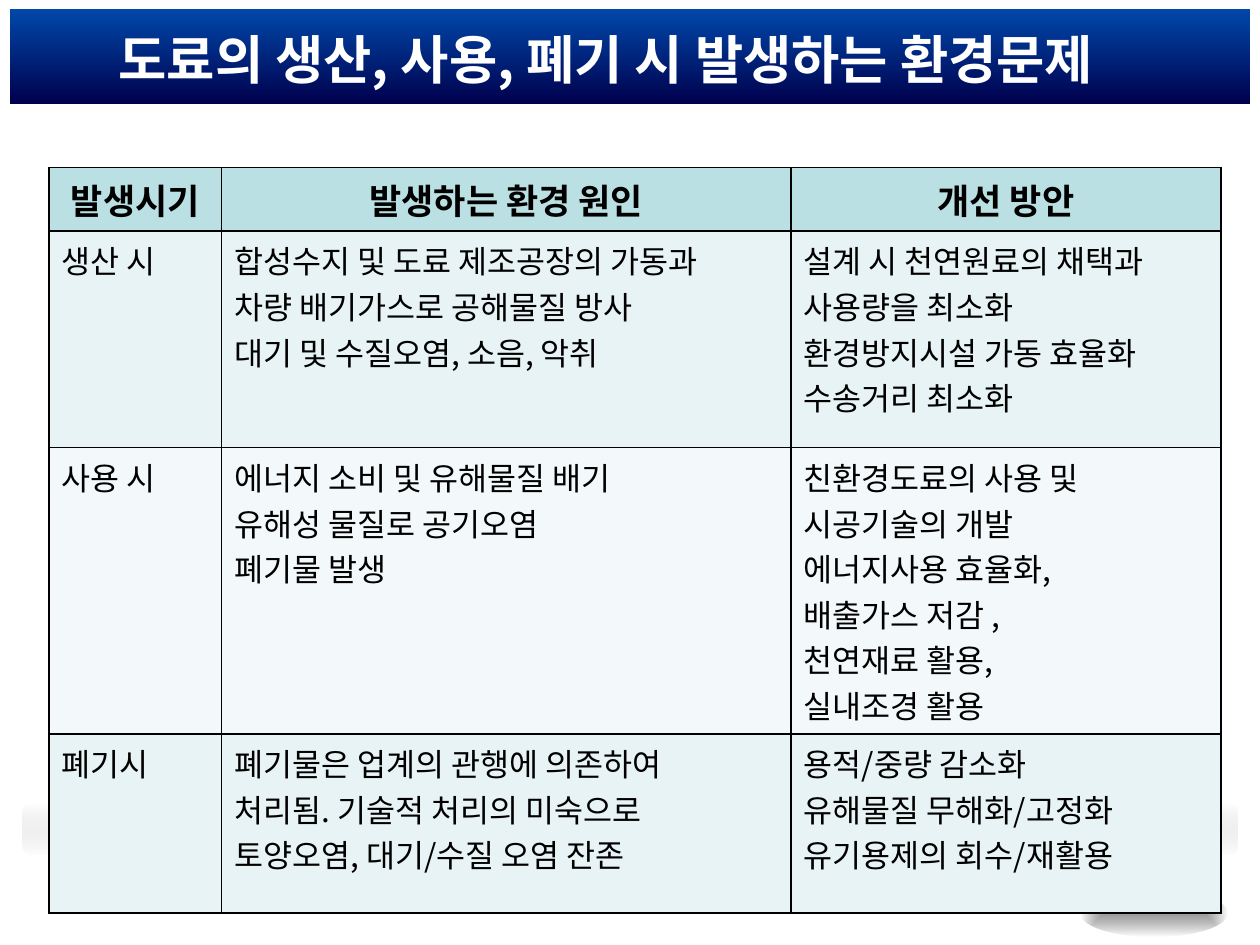
from lxml.etree import SubElement
from pptx import Presentation
from pptx.dml.color import RGBColor
from pptx.enum.shapes import MSO_SHAPE
from pptx.enum.text import MSO_ANCHOR, MSO_AUTO_SIZE, PP_ALIGN
from pptx.oxml import parse_xml
from pptx.oxml.ns import qn
from pptx.util import Inches, Pt

FACE = "Noto Sans CJK KR"
NS = 'xmlns:a="http://schemas.openxmlformats.org/drawingml/2006/main"'
COLS = [1.37, 4.52, 3.41]
ROWS = [0.44, 1.72, 2.16, 1.42]
FILLS = ["BBE0E3", "E7F3F4", "F3F9FA", "E7F3F4"]
CELLS = [
    ["발생시기", "발생하는 환경 원인", "개선 방안"],
    ["생산 시",
     "합성수지 및 도료 제조공장의 가동과\n차량 배기가스로 공해물질 방사\n대기 및 수질오염, 소음, 악취",
     "설계 시 천연원료의 채택과 사용량을 최소화\n환경방지시설 가동 효율화\n수송거리 최소화"],
    ["사용 시",
     "에너지 소비 및 유해물질 배기\n유해성 물질로 공기오염\n폐기물 발생",
     "친환경도료의 사용 및\n시공기술의 개발\n에너지사용 효율화,\n배출가스 저감 ,\n천연재료 활용,\n실내조경 활용"],
    ["폐기시",
     "폐기물은 업계의 관행에 의존하여\n처리됨. 기술적 처리의 미숙으로\n토양오염, 대기/수질 오염 잔존",
     "용적/중량 감소화\n유해물질 무해화/고정화\n유기용제의 회수/재활용"],
]


def color(code):
    return RGBColor.from_string(code)


def style(frame, size, code, bold, align):
    form = {"name": FACE, "size": Pt(size), "bold": bold}
    for para in frame.paragraphs:
        para.alignment = align
        for run in para.runs:
            for key, value in form.items():
                setattr(run.font, key, value)
            run.font.color.rgb = color(code)
            SubElement(run.font._element, qn("a:ea"), typeface=FACE)


def shade(slide, kind, box, stops, round_to=None, radial=False):
    shape = slide.shapes.add_shape(kind, *map(Inches, box))
    shape.shadow.inherit = False
    shape.line.fill.background()
    if round_to is not None:
        shape.adjustments[0] = round_to
    fill = shape.fill
    fill.gradient()
    fill.gradient_angle = 270
    for stop, (spot, code, alpha) in zip(fill.gradient_stops, stops):
        stop.position = spot
        stop.color.rgb = color(code)
        if alpha < 100:
            tint = stop._gs.find(qn("a:srgbClr"))
            SubElement(tint, qn("a:alpha"), val=str(alpha * 1000))
    if radial:
        lin = shape._element.spPr.find(".//" + qn("a:lin"))
        lin.getparent().replace(lin, parse_xml(
            f'<a:path {NS} path="shape"><a:fillToRect l="50000" t="50000" '
            'r="50000" b="50000"/></a:path>'))


def add_title(slide, text):
    title = slide.shapes.title
    slide.shapes._spTree.append(title._element)
    place = {"left": 0.31, "top": -0.16, "width": 9, "height": 1.25}
    for key, value in place.items():
        setattr(title, key, Inches(value))
    frame = title.text_frame
    frame.text = text
    form = {"vertical_anchor": MSO_ANCHOR.MIDDLE, "word_wrap": True,
            "auto_size": MSO_AUTO_SIZE.NONE}
    for key, value in form.items():
        setattr(frame, key, value)
    style(frame, 30, "FFFFFF", True, PP_ALIGN.CENTER)


def border(cell):
    props = cell._tc.get_or_add_tcPr()
    for spot, side in enumerate(["lnL", "lnR", "lnT", "lnB"]):
        props.insert(spot, parse_xml(
            f'<a:{side} {NS} w="12700"><a:solidFill><a:srgbClr val="000000"/>'
            f'</a:solidFill></a:{side}>'))


def add_grid(slide):
    box = map(Inches, (0.39, 1.33, sum(COLS), sum(ROWS)))
    grid = slide.shapes.add_table(len(ROWS), len(COLS), *box).table
    for col, width in zip(grid.columns, COLS):
        col.width = Inches(width)
    for row, height, code, texts in zip(grid.rows, ROWS, FILLS, CELLS):
        row.height = Inches(height)
        head = texts is CELLS[0]
        for cell, text in zip(row.cells, texts):
            cell.text = text
            cell.fill.solid()
            cell.fill.fore_color.rgb = color(code)
            border(cell)
            style(cell.text_frame, 20 if head else 18, "000000", head,
                  PP_ALIGN.CENTER if head else PP_ALIGN.LEFT)


def main():
    deck = Presentation()
    deck.slide_width, deck.slide_height = Inches(10), Inches(7.5)
    slide = deck.slides.add_slide(deck.slide_layouts[5])
    shade(slide, MSO_SHAPE.RECTANGLE, (0.08, 0.07, 9.84, 0.76),
          [(0, "0048AA", 100), (1, "00004D", 100)])
    shade(slide, MSO_SHAPE.ROUNDED_RECTANGLE, (0.18, 6.37, 9.64, 0.41),
          [(0, "FFFFFF", 80), (1, "B6B6B6", 0)], round_to=0.18)
    shade(slide, MSO_SHAPE.OVAL, (8.58, 7.06, 1.16, 0.37),
          [(0, "808080", 80), (1, "5C5C5C", 0)], radial=True)
    add_title(slide, "도료의 생산, 사용, 폐기 시 발생하는 환경문제")
    add_grid(slide)
    deck.save("out.pptx")


if __name__ == "__main__":
    main()
